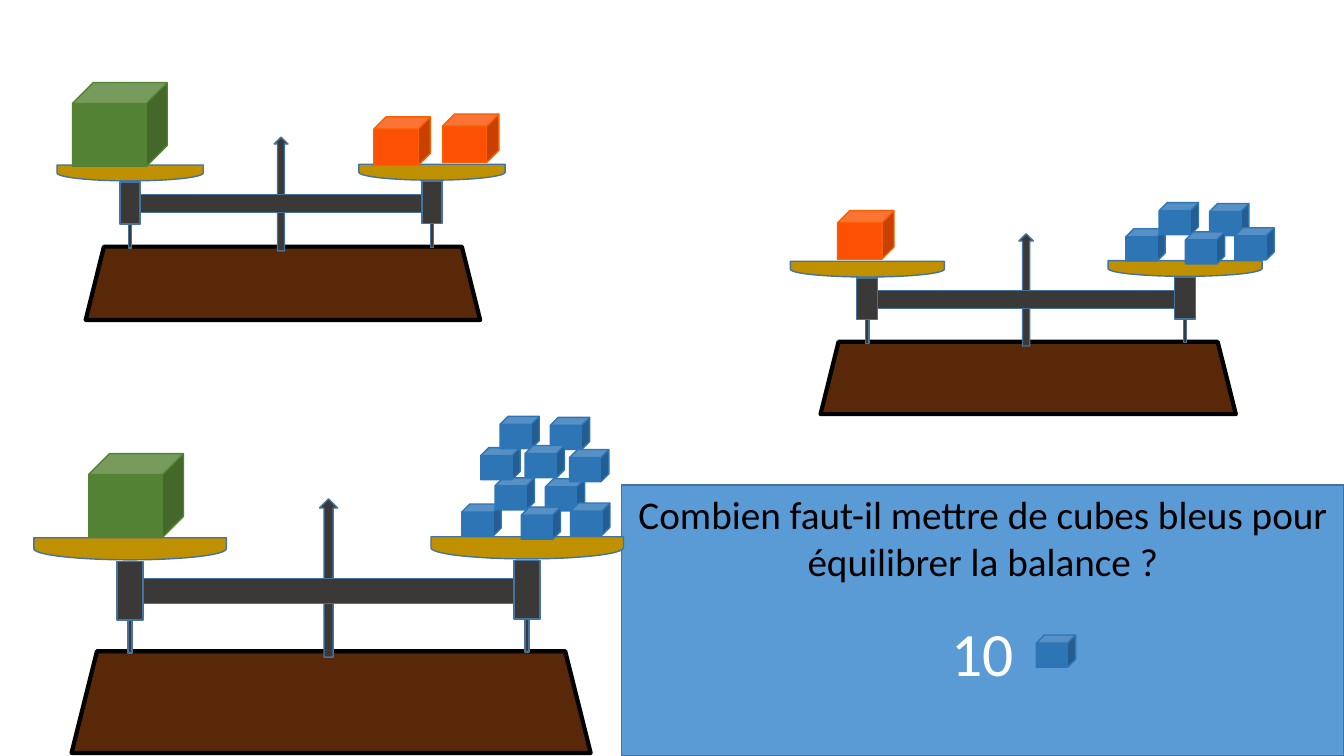
from pptx import Presentation
from pptx.dml.color import RGBColor
from pptx.enum.shapes import MSO_SHAPE as SHAPE
from pptx.enum.text import MSO_ANCHOR, PP_ALIGN
from pptx.util import Pt

COLORS = {
    "panel": "5B9BD5", "outline": "43739E", "wood": "582808", "metal": "3B3838",
    "brass": "BF9000", "green": "548235", "orange": "FC5104", "orange_line": "FA5F00",
    "blue": "2E75B6", "black": "000000", "white": "FFFFFF",
}

prs = Presentation()
prs.slide_width, prs.slide_height = Pt(960), Pt(540)
s = prs.slides.add_slide(prs.slide_layouts[6])


def add_shape(kind, x, y, w, h, fill, line="outline", line_width=1):
    sp = s.shapes.add_shape(kind, Pt(x), Pt(y), Pt(w), Pt(h))
    sp.shadow.inherit = False
    sp.fill.solid()
    sp.fill.fore_color.rgb = RGBColor.from_string(COLORS[fill])
    sp.line.color.rgb = RGBColor.from_string(COLORS[line])
    sp.line.width = Pt(line_width)
    return sp


def add_scale(x, y, kx, ky):
    add_shape(SHAPE.TRAPEZOID, x, y + 108.7 * ky, 370.8 * kx, 72.7 * ky, "wood", "black", 3)
    add_shape(SHAPE.UP_ARROW, x + 177.1 * kx, y, 13 * kx, 113 * ky, "metal")
    add_shape(SHAPE.RECTANGLE, x + 37.4 * kx, y + 56.9 * ky, 292.3 * kx, 18 * ky, "metal")
    for dx, dy in [(0, 0), (283.7, -0.7)]:
        left, top = x + dx * kx, y + dy * ky
        for px, py, w, h in [(40.3, 44.6, 2.9, 65.5), (32.4, 44.6, 18.7, 41.8)]:
            add_shape(SHAPE.RECTANGLE, left + px * kx, top + py * ky, w * kx, h * ky, "metal")
        w, h = 15.8 * ky, 137.5 * kx
        cx, cy = left + 41.8 * kx, top + 35.6 * ky
        pan = add_shape(SHAPE.FLOWCHART_DELAY, cx - w / 2, cy - h / 2, w, h, "brass")
        pan.rotation = 90


panel = add_shape(SHAPE.RECTANGLE, 444, 346.3, 516, 193.7, "panel")
tf = panel.text_frame
tf.word_wrap = True
tf.vertical_anchor = MSO_ANCHOR.MIDDLE
tf.margin_bottom = Pt(47.6)
tf.text = "Combien faut-il mettre de cubes bleus pour équilibrer la balance ?\n10"
for p, size, color in zip(tf.paragraphs, (28, 44), ("black", "white")):
    p.alignment = PP_ALIGN.CENTER
    r = p.runs[0]
    r.font.name = "Calibri"
    r.font.size = Pt(size)
    r.font.color.rgb = RGBColor.from_string(COLORS[color])
tf.paragraphs[1].space_before = Pt(22)

for x, y, kx, ky in [(586.1, 167, 0.8, 0.71), (61.2, 97.9, 0.76, 0.72), (51.1, 356.4, 1, 1)]:
    add_scale(x, y, kx, ky)

for x, y in [(51.8, 59), (63.4, 324)]:
    add_shape(SHAPE.CUBE, x, y, 67.7, 59.8, "green", "green")

for x, y in [(267.1, 83.5), (316.1, 81.4), (598.3, 150.5)]:
    add_shape(SHAPE.CUBE, x, y, 40.3, 34.6, "orange", "orange_line")

pile = [(0, 0), (23.8, -18.7), (59.8, -18), (42.5, 2.2), (77.8, -0.7)]
blue_cubes = [(x + dx, y + dy) for x, y in [(804.2, 163.4), (329.8, 360)] for dx, dy in pile]
blue_cubes += [(343.4, 319.7), (357.1, 297.4), (393.1, 298.1), (375.1, 318.2), (406.8, 321.1)]
blue_cubes += [(740.2, 453.6)]
for x, y in blue_cubes:
    add_shape(SHAPE.CUBE, x, y, 28.1, 23, "blue", "blue")

prs.save("out.pptx")
